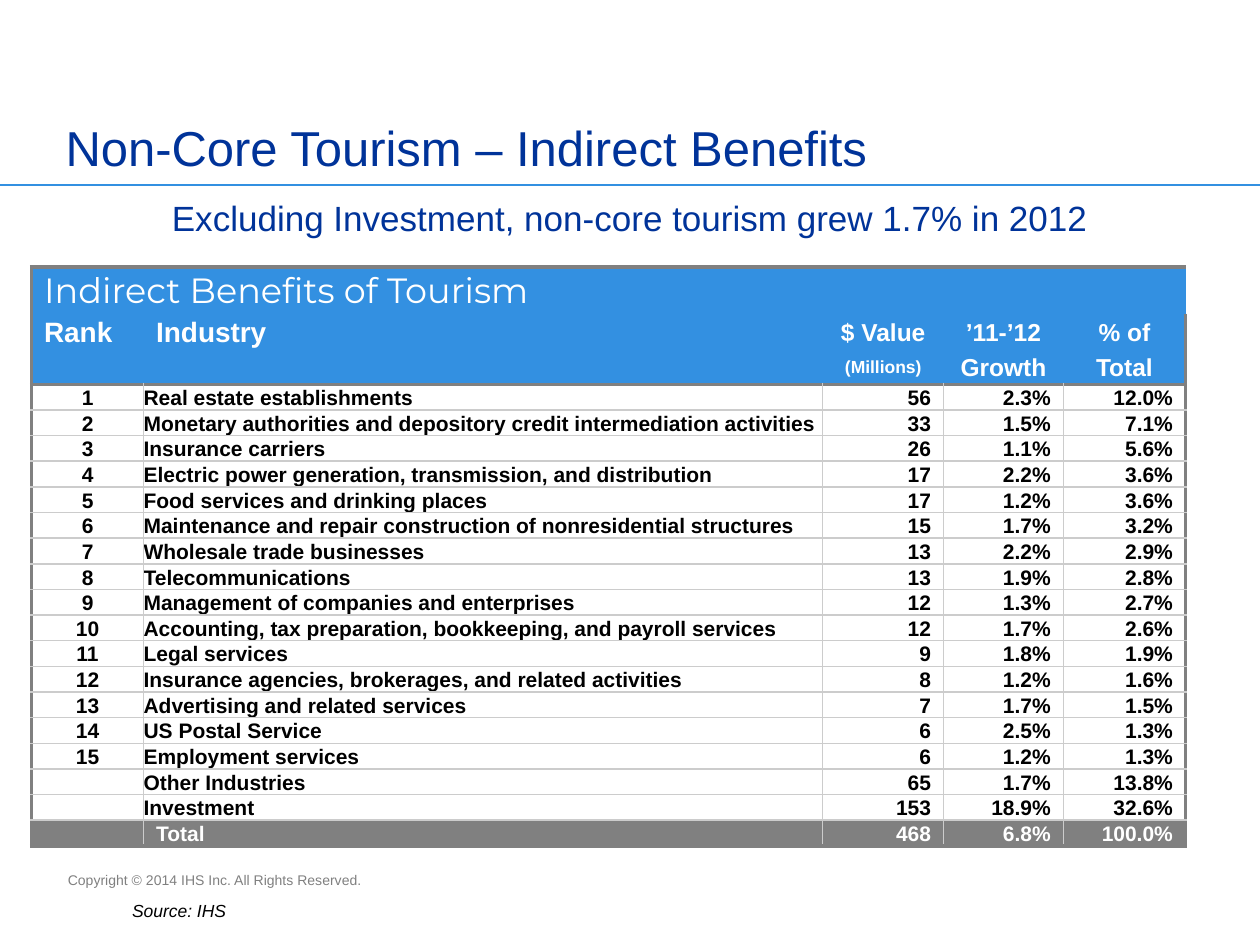
from lxml.etree import SubElement
from pptx import Presentation
from pptx.dml.color import RGBColor
from pptx.enum.shapes import MSO_CONNECTOR as Link
from pptx.enum.text import MSO_ANCHOR as Anchor, MSO_AUTO_SIZE as Auto, PP_ALIGN as Align
from pptx.oxml.ns import qn
from pptx.util import Inches, Pt

NAVY = RGBColor(0x00, 0x33, 0x99)
BLUE = RGBColor(0x33, 0x90, 0xE1)
GRAY = RGBColor(0x80, 0x80, 0x80)
PALE = RGBColor(0xCC, 0xCC, 0xCC)
WHITE = RGBColor(0xFF, 0xFF, 0xFF)
BLACK = RGBColor(0x00, 0x00, 0x00)

HEAD = [
    ("Indirect Benefits of Tourism", "", "", "", ""),
    ("Rank", "Industry", "$ Value", "’11-’12", "% of"),
    ("", "", "(Millions)", "Growth", "Total"),
]
BODY = [
    ("1", "Real estate establishments", "56", "2.3%", "12.0%"),
    ("2", "Monetary authorities and depository credit intermediation activities", "33", "1.5%", "7.1%"),
    ("3", "Insurance carriers", "26", "1.1%", "5.6%"),
    ("4", "Electric power generation, transmission, and distribution", "17", "2.2%", "3.6%"),
    ("5", "Food services and drinking places", "17", "1.2%", "3.6%"),
    ("6", "Maintenance and repair construction of nonresidential structures", "15", "1.7%", "3.2%"),
    ("7", "Wholesale trade businesses", "13", "2.2%", "2.9%"),
    ("8", "Telecommunications", "13", "1.9%", "2.8%"),
    ("9", "Management of companies and enterprises", "12", "1.3%", "2.7%"),
    ("10", "Accounting, tax preparation, bookkeeping, and payroll services", "12", "1.7%", "2.6%"),
    ("11", "Legal services", "9", "1.8%", "1.9%"),
    ("12", "Insurance agencies, brokerages, and related activities", "8", "1.2%", "1.6%"),
    ("13", "Advertising and related services", "7", "1.7%", "1.5%"),
    ("14", "US Postal Service", "6", "2.5%", "1.3%"),
    ("15", "Employment services", "6", "1.2%", "1.3%"),
    ("", "Other Industries", "65", "1.7%", "13.8%"),
    ("", "Investment", "153", "18.9%", "32.6%"),
    ("", "Total", "468", "6.8%", "100.0%"),
]
WIDTHS = [0.89, 5.39, 0.96, 0.95, 0.97]
TOPS = [0.37, 0.3, 0.26]
TALL = 4.6


class Deck:
    font = "Arial"

    def __init__(self):
        self.file = Presentation()
        self.file.slide_width, self.file.slide_height = Inches(10), Inches(7.5)
        self.slide = self.file.slides.add_slide(self.file.slide_layouts[1])

    def put(self, frame, text, size, color, align=Align.LEFT, bold=False, italic=False, font=None):
        para = frame.paragraphs[0]
        para.text = text
        para.alignment = align
        para.space_before = Pt(0)
        for run in para.runs:
            face = run.font
            face.name, face.size = font or self.font, Pt(size)
            face.bold, face.italic = bold, italic
            face.color.rgb = color
        if not text:
            SubElement(para._p, qn("a:endParaRPr"), sz=str(size * 100))
        return para

    def holder(self, index, box, text, size, anchor, align):
        shape = self.slide.placeholders[index]
        shape.left, shape.top, shape.width, shape.height = map(Inches, box)
        frame = shape.text_frame
        frame.auto_size, frame.vertical_anchor = Auto.NONE, anchor
        para = self.put(frame, text, size, NAVY, align)
        props = para._p.get_or_add_pPr()
        props.set("marL", "0")
        props.set("indent", "0")
        SubElement(props, qn("a:buNone"))

    def label(self, box, text, size, color, wrap=True, italic=False):
        frame = self.slide.shapes.add_textbox(*map(Inches, box)).text_frame
        frame.word_wrap, frame.auto_size = wrap, Auto.SHAPE_TO_FIT_TEXT
        self.put(frame, text, size, color, italic=italic)

    def rule(self, y, color):
        line = self.slide.shapes.add_connector(Link.STRAIGHT, 0, Inches(y), Inches(10), Inches(y))
        line.line.color.rgb, line.line.width = color, Pt(1)
        SubElement(line._element.spPr, qn("a:effectLst"))

    def edge(self, cell, side, style):
        color, width = style or (None, 0)
        line = SubElement(cell._tc.get_or_add_tcPr(), qn("a:ln" + side), w=str(Pt(width)))
        if color is None:
            SubElement(line, qn("a:noFill"))
        else:
            fill = SubElement(line, qn("a:solidFill"))
            SubElement(fill, qn("a:srgbClr"), val=str(color))

    def cell(self, cell, fill, pads, anchor):
        cell.fill.solid()
        cell.fill.fore_color.rgb = fill
        cell.margin_left, cell.margin_top, cell.margin_right, cell.margin_bottom = map(Inches, pads)
        cell.vertical_anchor = anchor

    def table(self, left, top):
        rows = HEAD + BODY
        last, end = len(rows) - 1, len(WIDTHS) - 1
        frame = self.slide.shapes.add_table(
            len(rows), len(WIDTHS), Inches(left), Inches(top), Inches(sum(WIDTHS)), Inches(TALL))
        grid = frame.table
        grid.first_row = grid.horz_banding = False
        for col, width in zip(grid.columns, WIDTHS):
            col.width = Inches(width)
        step = (TALL - sum(TOPS)) / len(BODY)
        for row, high in zip(grid.rows, TOPS + [step] * len(BODY)):
            row.height = Inches(high)
        thick, thin = (GRAY, 2.25), (PALE, 1)
        split = len(HEAD)
        for r, row in enumerate(rows):
            head, total = r < split, r == last
            inner = None if head else thin
            for c, text in enumerate(row):
                cell = grid.cell(r, c)
                self.edge(cell, "L", thick if c == 0 else inner)
                self.edge(cell, "R", thick if c == end else inner)
                self.edge(cell, "T", thick if r in (0, split) else inner)
                self.edge(cell, "B", thick if r in (split - 1, last) else inner)
                if head:
                    self.cell(cell, BLUE, (0.1, 0.01, 0.1, 0.01), Anchor.MIDDLE)
                    size = 20 if r == 0 else 10 if text == "(Millions)" else 16 if r == 1 and c < 2 else 14
                    align = Align.CENTER if c > 1 else Align.LEFT
                    font = "Montserrat" if r == 0 else None
                    self.put(cell.text_frame, text, size, WHITE, align, r > 0, font=font)
                else:
                    pads = (0.1 if total and c == 1 else 0, 0, 0.1 if c > 1 else 0, 0)
                    self.cell(cell, GRAY if total else WHITE, pads, Anchor.BOTTOM)
                    align = (Align.CENTER, Align.LEFT)[c] if c < 2 else Align.RIGHT
                    self.put(cell.text_frame, text, 12, WHITE if total else BLACK, align, True)
        grid.cell(0, 0).merge(grid.cell(0, end))


def main():
    deck = Deck()
    deck.rule(1.47, BLUE)
    deck.label((0.44, 6.87, 3.57, 0.23), "Copyright © 2014 IHS Inc. All Rights Reserved.", 8, GRAY)
    deck.holder(0, (0.42, 0.21, 8.23, 1.24), "Non-Core Tourism – Indirect Benefits", 28, Anchor.BOTTOM, Align.LEFT)
    deck.holder(1, (0, 1.42, 10, 0.61), "Excluding Investment, non-core tourism grew 1.7% in 2012",
                20, Anchor.MIDDLE, Align.CENTER)
    deck.table(0.25, 2.12)
    deck.label((0.95, 7.09, 1.03, 0.27), "Source: IHS", 10, BLACK, wrap=False, italic=True)
    deck.file.save("out.pptx")


if __name__ == "__main__":
    main()
